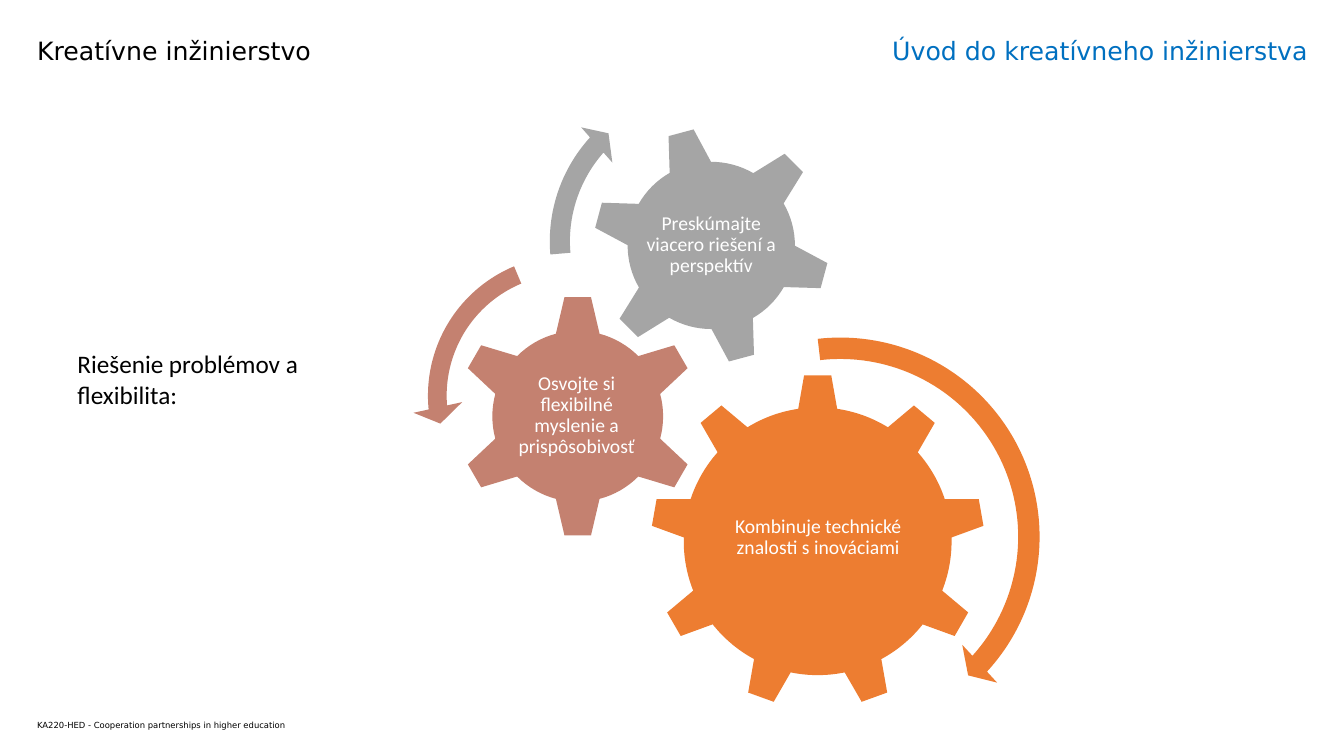
from pptx import Presentation
from pptx.dml.color import RGBColor
from pptx.enum.shapes import MSO_SHAPE
from pptx.enum.text import MSO_ANCHOR, PP_ALIGN
from pptx.util import Inches, Pt

BLACK, WHITE, BLUE = "000000", "FFFFFF", "0070C0"
ORANGE, TERRACOTTA, GRAY = "ED7D31", "C48170", "A5A5A5"
HEADING_FONT, BODY_FONT = "DejaVu Sans", "Calibri"


def color(value):
    return RGBColor.from_string(value)


class SlideBuilder:
    def __init__(self, presentation):
        self.slide = presentation.slides.add_slide(presentation.slide_layouts[6])

    def text(self, box, content, size=18, font=BODY_FONT, fill=BLACK,
             align=PP_ALIGN.LEFT):
        shape = self.slide.shapes.add_textbox(*map(Inches, box))
        shape.text_frame.word_wrap = True
        paragraph = shape.text_frame.paragraphs[0]
        paragraph.alignment = align
        run = paragraph.add_run()
        run.text = content
        run.font.size = Pt(size)
        run.font.name = font
        run.font.color.rgb = color(fill)
        return shape

    def square_shape(self, kind, left, top, size, fill):
        shape = self.slide.shapes.add_shape(
            kind, Inches(left), Inches(top), Inches(size), Inches(size))
        shape.shadow.inherit = False
        shape.fill.solid()
        shape.fill.fore_color.rgb = color(fill)
        shape.line.fill.background()
        return shape

    def gear(self, kind, left, top, size, fill, label, label_box, rotation=0):
        self.square_shape(kind, left, top, size, fill).rotation = rotation
        frame = self.text(label_box, label, 14, fill=WHITE,
                          align=PP_ALIGN.CENTER).text_frame
        frame.vertical_anchor = MSO_ANCHOR.MIDDLE
        frame.margin_left = frame.margin_right = Inches(0.02)
        frame.margin_top = frame.margin_bottom = Inches(0.02)
        frame.paragraphs[0].line_spacing = 0.9

    def curved_arrow(self, kind, left, top, size, fill, adjustments):
        shape = self.square_shape(kind, left, top, size, fill)
        for index, value in enumerate(adjustments):
            shape.adjustments[index] = value


def main():
    presentation = Presentation()
    presentation.slide_width = Inches(13.33)
    presentation.slide_height = Inches(7.5)
    builder = SlideBuilder(presentation)

    # Footer and headings
    builder.text((0.27, 7.09, 3.53, 0.2),
                 "KA220-HED - Cooperation partnerships in higher education",
                 6, HEADING_FONT)
    builder.text((4.69, 0.3, 8.38, 0.4), "Úvod do kreatívneho inžinierstva",
                 18, HEADING_FONT, BLUE, PP_ALIGN.RIGHT)
    builder.text((0.27, 0.3, 6.67, 0.4), "Kreatívne inžinierstvo",
                 18, HEADING_FONT)

    # Gears with their labels
    builder.gear(MSO_SHAPE.GEAR_9, 6.45, 3.71, 3.32, ORANGE,
                 "Kombinuje technické znalosti s inováciami",
                 (7.12, 4.48, 1.99, 1.71))
    builder.gear(MSO_SHAPE.GEAR_6, 4.52, 2.92, 2.42, TERRACOTTA,
                 "Osvojte si flexibilné myslenie a prispôsobivosť",
                 (5.12, 3.53, 1.2, 1.19))
    builder.gear(MSO_SHAPE.GEAR_6, 5.87, 1.25, 2.37, GRAY,
                 "Preskúmajte viacero riešení a perspektív",
                 (6.39, 1.77, 1.33, 1.33), rotation=345)

    # Arrows showing how the gears turn
    builder.curved_arrow(MSO_SHAPE.CIRCULAR_ARROW, 6.21, 3.2, 4.25, ORANGE,
                         (0.05, 2.99, 25.41, 158.09, 0.06))
    builder.curved_arrow(MSO_SHAPE.LEFT_CIRCULAR_ARROW, 4.09, 2.38, 3.09,
                         TERRACOTTA, (0.06, 4.3, 104.89, 148.38, 0.08))
    builder.curved_arrow(MSO_SHAPE.CIRCULAR_ARROW, 5.32, 0.73, 3.33, GRAY,
                         (0.06, 3.94, 133.14, 105.08, 0.07))

    # Topic
    builder.text((0.67, 3.41, 3.2, 0.4), "Riešenie problémov a flexibilita:")

    presentation.save("out.pptx")


if __name__ == "__main__":
    main()
